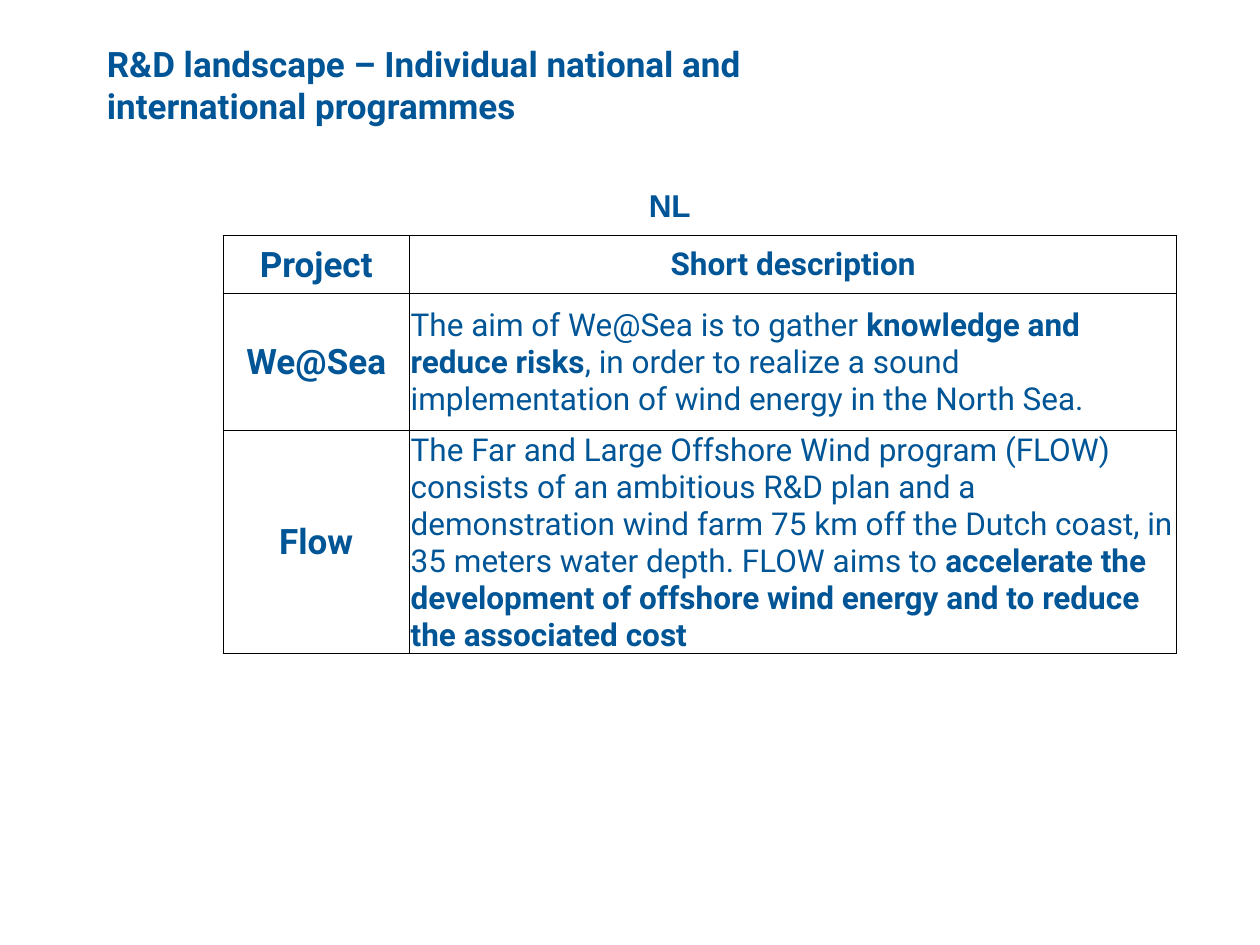
import pptx
import pptx.dml.color
import pptx.enum.text
import pptx.oxml
import pptx.oxml.ns
import pptx.util

BLUE = pptx.dml.color.RGBColor(0x00, 0x55, 0x96)
BLACK = pptx.dml.color.RGBColor(0x00, 0x00, 0x00)
LEFT = pptx.enum.text.PP_ALIGN.LEFT
CENTER = pptx.enum.text.PP_ALIGN.CENTER
SLIDE_WIDTH = pptx.util.Inches(10)
SLIDE_HEIGHT = pptx.util.Inches(7.5)

# Table grid, in percent of the slide's width and height
TABLE_LEFT = 17.7
COLUMNS = (14.8, 60.9)
HEADER_TOP = 24.93
HEADER_HEIGHT = 6.13
PROJECT_ROWS = (14.53, 10)
PROJECT_HEIGHT = 34.67

PROJECTS = (
    ("We@Sea", (
        ("The aim of We@Sea is to gather ", False),
        ("knowledge and reduce risks", True),
        (", in order to realize a sound implementation of wind energy "
         "in the North Sea.", False))),
    ("Flow", (
        ("The Far and Large Offshore Wind program (FLOW) consists of an "
         "ambitious R&D plan and a demonstration wind farm 75 km off the "
         "Dutch coast, in 35 meters water depth. FLOW aims to ", False),
        ("accelerate the development of offshore wind energy and to reduce "
         "the associated cost", True))),
)


def across(percent):
    return round(SLIDE_WIDTH * percent / 100)


def down(percent):
    return round(SLIDE_HEIGHT * percent / 100)


def write_text(text_frame, text, size=18, font="Roboto", align=LEFT):
    """Write a bold string, or a series of (string, bold) parts."""
    parts = ((text, True),) if isinstance(text, str) else text
    paragraph = text_frame.paragraphs[0]
    paragraph.alignment = align
    for content, bold in parts:
        run = paragraph.add_run()
        run.text = content
        run.font.name = font
        run.font.size = pptx.util.Pt(size)
        run.font.bold = bold
        run.font.color.rgb = BLUE


def add_text(slide, text, left, top, width, height, **text_format):
    box = slide.shapes.add_textbox(
        across(left), down(top), across(width), down(height))
    box.text_frame.word_wrap = True
    box.text_frame.auto_size = pptx.enum.text.MSO_AUTO_SIZE.SHAPE_TO_FIT_TEXT
    write_text(box.text_frame, text, **text_format)


def format_cell(cell):
    cell.vertical_anchor = pptx.enum.text.MSO_ANCHOR.MIDDLE
    cell.margin_left = cell.margin_right = cell.margin_top = pptx.util.Inches(0.01)
    cell.margin_bottom = 0
    properties = cell._tc.get_or_add_tcPr()
    for side in ("lnL", "lnR", "lnT", "lnB"):
        properties.append(pptx.oxml.parse_xml(
            f'<a:{side} {pptx.oxml.ns.nsdecls("a")} w="{pptx.util.Pt(0.5)}">'
            f'<a:solidFill><a:srgbClr val="{BLACK}"/></a:solidFill></a:{side}>'))
    cell.fill.background()


def add_table(slide, rows, top, row_heights, height, description_align):
    frame = slide.shapes.add_table(
        len(rows), len(COLUMNS), across(TABLE_LEFT), down(top),
        across(sum(COLUMNS)), down(height))
    table = frame.table
    table.first_row = table.horz_banding = False
    for column, width in zip(table.columns, COLUMNS):
        column.width = across(width)
    for row, row_height, (project, description) in zip(
            table.rows, row_heights, rows):
        row.height = down(row_height)
        for cell in row.cells:
            format_cell(cell)
        write_text(row.cells[0].text_frame, project, size=20, align=CENTER)
        write_text(row.cells[1].text_frame, description, align=description_align)
    frame.height = down(height)


def main():
    presentation = pptx.Presentation()
    presentation.slide_width = SLIDE_WIDTH
    presentation.slide_height = SLIDE_HEIGHT
    slide = presentation.slides.add_slide(presentation.slide_layouts[6])

    # Projects
    add_table(slide, PROJECTS, HEADER_TOP + HEADER_HEIGHT, PROJECT_ROWS,
              PROJECT_HEIGHT, LEFT)

    # Country and title
    add_text(slide, "NL", 38.2, 19.07, 29.9, 5.33, font="Arial", align=CENTER)
    add_text(slide,
             "R&D landscape – Individual national and international programmes",
             7.5, 3.87, 59.8, 10.27, size=20)

    # Column headings
    add_table(slide, (("Project", "Short description"),), HEADER_TOP,
              (HEADER_HEIGHT,), HEADER_HEIGHT, CENTER)

    presentation.save("out.pptx")


if __name__ == "__main__":
    main()
